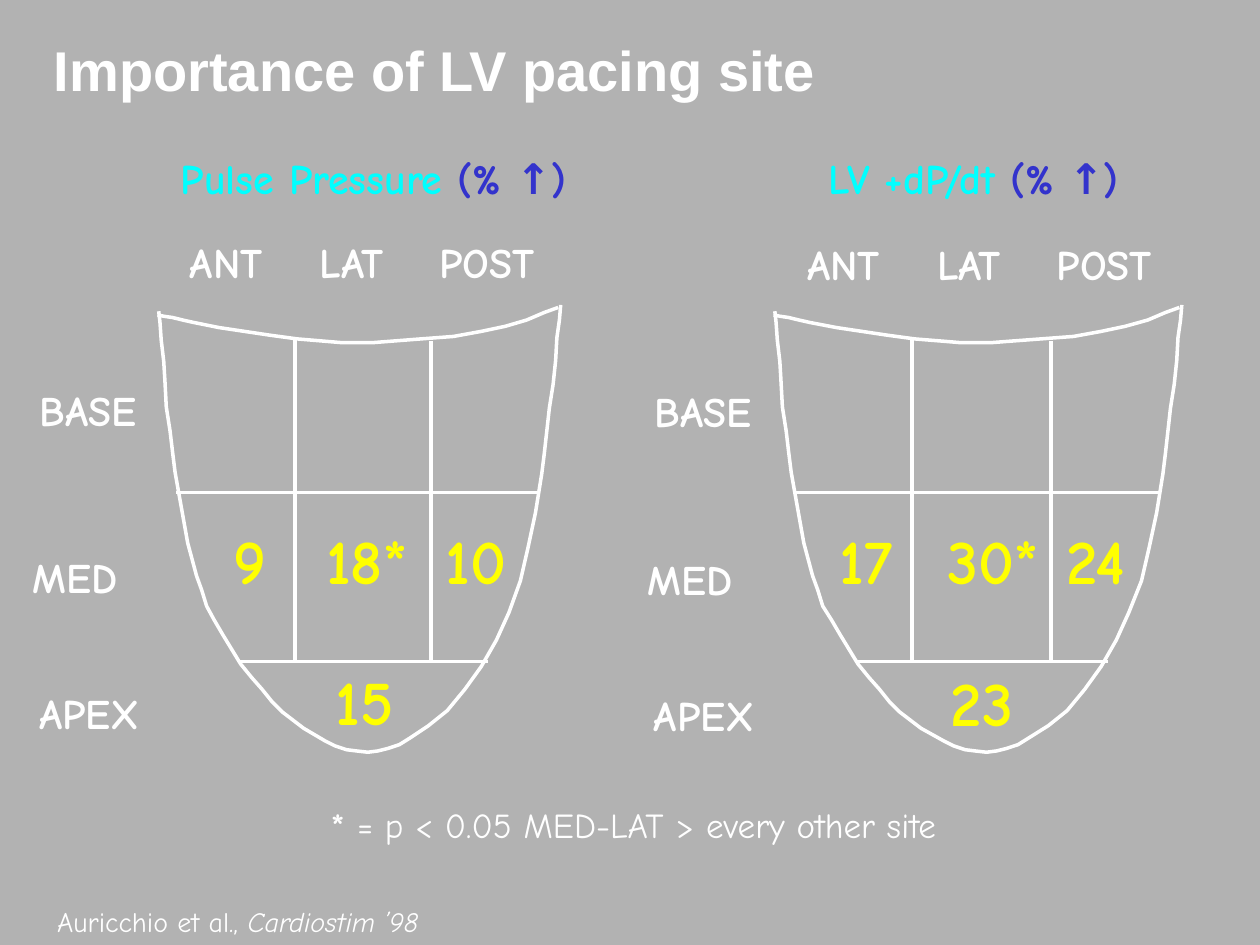
from pptx import Presentation
from pptx.dml.color import RGBColor
from pptx.enum.shapes import MSO_CONNECTOR
from pptx.enum.text import MSO_ANCHOR, MSO_AUTO_SIZE, PP_ALIGN
from pptx.oxml.ns import qn
from pptx.util import Pt
from lxml import etree

LEFT, MID, RIGHT = PP_ALIGN.LEFT, PP_ALIGN.CENTER, PP_ALIGN.RIGHT
STRAIGHT = MSO_CONNECTOR.STRAIGHT
PX = 9144
WHITE, CYAN, BLUE, GOLD = "FFFFFF", "00FFFF", "3333CC", "FFFF00"

deck = Presentation()
deck.slide_width, deck.slide_height = 1000 * PX, 750 * PX
slide = deck.slides.add_slide(deck.slide_layouts[6])


def hue(target, code):
    target.rgb = RGBColor.from_string(code)


def put(words, x, y, w, h, size, code=WHITE, align=MID, bold=True, face="Comic Neue"):
    box = slide.shapes.add_textbox(x * PX, y * PX, w * PX, h * PX)
    box.text_frame.auto_size = MSO_AUTO_SIZE.SHAPE_TO_FIT_TEXT
    box.text_frame.word_wrap = False
    para = box.text_frame.paragraphs[0]
    para.alignment = align
    font = para.font
    font.name, font.size, font.bold = face, Pt(size), bold
    hue(font.color, code)
    for word in words:
        para.add_run().text = word
    return box.text_frame


slide.background.fill.solid()
hue(slide.background.fill.fore_color, "B2B2B2")

wall = [(126, 247), (127, 256), (128, 270), (130, 287), (131, 304), (132, 323),
        (135, 342), (137, 359), (139, 375), (144, 403), (149, 431), (156, 457),
        (160, 468), (164, 481), (170, 492), (177, 504), (191, 527), (200, 538),
        (208, 547), (216, 557), (224, 565), (241, 578), (258, 588), (266, 592),
        (275, 595), (283, 596), (292, 597), (300, 596), (308, 594), (317, 591),
        (325, 586), (340, 576), (355, 564), (369, 547), (382, 529), (394, 508),
        (404, 486), (413, 461), (419, 435), (425, 407), (430, 376), (432, 360),
        (434, 342), (436, 324), (439, 305), (441, 286), (442, 268), (444, 254),
        (445, 242)]
rim = [(125, 250), (130, 251), (137, 252), (145, 254), (154, 256), (174, 260),
       (194, 263), (214, 266), (236, 269), (260, 271), (272, 272), (295, 272),
       (308, 271), (334, 269), (360, 267), (382, 263), (401, 259), (418, 254),
       (432, 248), (443, 244)]
grid = [(189, 525, 387, 525), (140, 391, 427, 391),
        (234, 268, 234, 525), (342, 271, 342, 525)]
rows = [("BASE", 9, 300, 109), ("MED", 8, 433, 95), ("APEX", 14, 541, 107)]
cols = [("ANT", 132, 95), ("LAT", 236, 86), ("POST", 331, 111)]

panels = [
    (126, 319, 0, 0, 0, ("Pulse Pressure ", 121, 351),
     [("9", 173, 409, 51), ("18*", 237, 409, 108), ("10", 337, 409, 81), ("15", 249, 521, 81)]),
    (615, 323, 488, 490, 1, ("LV +dP/dt ", 630, 286),
     [("17", 647, 409, 81), ("30*", 734, 409, 108), ("24", 829, 409, 81), ("23", 739, 522, 81)]),
]

for start, span, side, top, drop, (name, x, w), scores in panels:
    across = {i: round(start + (i - 126) * span / 319) for i in range(125, 446)}

    for curve in (wall, rim):
        dots = [(across[i] * PX, j * PX) for i, j in curve]
        pen = slide.shapes.build_freeform(*dots[0])
        pen.add_line_segments(dots[1:], close=False)
        shape = pen.convert_to_shape()
        shape.shadow.inherit = False
        shape.fill.background()
        hue(shape.line.color, WHITE)
        shape.line.width = Pt(2)

    for x1, y1, x2, y2 in grid:
        rule = slide.shapes.add_connector(
            STRAIGHT, across[x1] * PX, y1 * PX, across[x2] * PX, y2 * PX)
        etree.SubElement(rule._element.spPr, qn("a:effectLst"))
        hue(rule.line.color, WHITE)
        rule.line.width = Pt(2)

    for label, left, y, wide in rows:
        put([label], left + side, y + drop, wide, 50, 24, align=RIGHT)
    for label, left, wide in cols:
        put([label], left + top, 183 + drop, wide, 50, 24)
    for score, left, y, wide in scores:
        put([score], left, y, wide, 70, 36, GOLD)

    head = put([name, "(% ↑)"], x, 116, w, 50, 24, CYAN)
    hue(head.paragraphs[0].runs[1].font.color, BLUE)

note = put(["* ", "= p < 0.05 MED-LAT > every other site"], 231, 633, 544, 43, 20, bold=False)
note.paragraphs[0].runs[0].font.bold = True

cite = put(["Auricchio et al., ", "Cardiostim ’98"], 0, 713, 342, 37, 16, align=RIGHT, bold=False)
cite.word_wrap = True
cite.paragraphs[0].runs[1].font.italic = True

title = put(["Importance of LV pacing site"], 33, 17, 933, 83, 32, align=LEFT, face="Arial")
title.auto_size = MSO_AUTO_SIZE.NONE
title.word_wrap = True
title.vertical_anchor = MSO_ANCHOR.MIDDLE
title.paragraphs[0].line_spacing = 0.9

deck.save("out.pptx")
